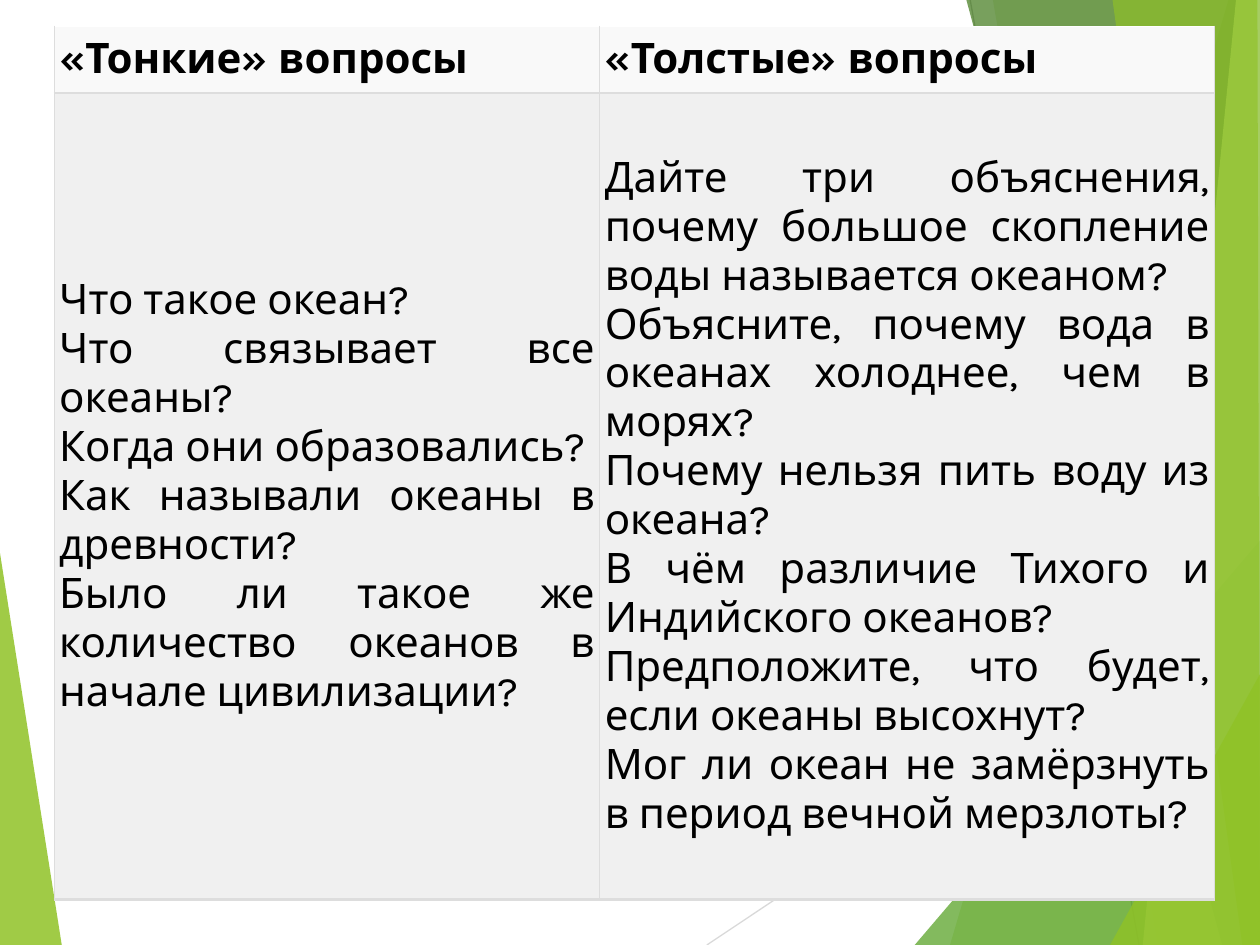
from lxml.etree import SubElement
from pptx import Presentation
from pptx.dml.color import RGBColor
from pptx.enum.shapes import MSO_CONNECTOR
from pptx.enum.text import MSO_ANCHOR, PP_ALIGN
from pptx.oxml import parse_xml
from pptx.oxml.ns import nsdecls, qn
from pptx.util import Inches, Pt

WIDTH, HEIGHT = 10, 7.5
FONT, TEXT_SIZE = "Karla", 24
TEXT, BORDER = "000000", "DDDDDD"

# Table content, one list of paragraphs per cell
HEADERS = [["«Тонкие» вопросы"], ["«Толстые» вопросы"]]
QUESTIONS = [
    [
        "Что такое океан?",
        "Что связывает все океаны?",
        "Когда они образовались?",
        "Как называли океаны в древности?",
        "Было ли такое же количество океанов в начале цивилизации?",
    ],
    [
        "Дайте три объяснения, почему большое скопление воды называется океаном?",
        "Объясните, почему вода в океанах холоднее, чем в морях?",
        "Почему нельзя пить воду из океана?",
        "В чём различие Тихого и Индийского океанов?",
        "Предположите, что будет, если океаны высохнут?",
        "Мог ли океан не замёрзнуть в период вечной мерзлоты?",
    ],
]
# Cells, fill, bold, bordered sides
ROWS = [(HEADERS, "F9F9F9", True, "LRB"), (QUESTIONS, "F0F0F0", False, "LRTB")]
TABLE_LEFT, TABLE_TOP = 0.43, 0.21
COLUMN_WIDTHS, ROW_HEIGHTS = [4.33, 4.88], [0.53, 6.4]
CELL_MARGIN = 0.04
BORDER_WIDTHS = {"L": 0.75, "R": 0.75, "T": 1.5, "B": 1.5}

# Background facets: colour, opacity in percent, corners
LEFT_FACET = ("90C226", 85, [(0, 4.39), (0.49, HEIGHT), (0, HEIGHT)])
RIGHT_FACETS = [
    ("90C226", 30, [(9.75, 0), (7.54, HEIGHT), (WIDTH, HEIGHT), (WIDTH, 0)]),
    ("90C226", 20, [(7.88, 0), (9.19, HEIGHT), (WIDTH, HEIGHT), (WIDTH, 0)]),
    ("54A021", 72, [(7.26, HEIGHT), (WIDTH, 4.29), (WIDTH, HEIGHT)]),
    ("3F7819", 70, [(7.67, 0), (9.7, HEIGHT), (WIDTH, HEIGHT), (WIDTH, 0)]),
    ("C0E474", 70, [(9.81, 0), (9.07, HEIGHT), (WIDTH, HEIGHT), (WIDTH, 0)]),
    ("90C226", 65, [(8.83, 0), (9.86, HEIGHT), (WIDTH, HEIGHT), (9.98, 0)]),
    ("90C226", 80, [(8.81, HEIGHT), (WIDTH, 5.35), (WIDTH, HEIGHT)]),
]
# Thin lines: start, end, colour
LINES = [
    ((5.61, HEIGHT), (WIDTH, 4.57), "D9D9D9"),
    ((7.7, 0), (9.04, HEIGHT), "BFBFBF"),
]


def color(hex_string):
    return RGBColor.from_string(hex_string)


def add_facet(slide, fill, opacity, corners):
    points = [(Inches(x), Inches(y)) for x, y in corners]
    builder = slide.shapes.build_freeform(*points[0])
    builder.add_line_segments(points[1:], close=True)
    facet = builder.convert_to_shape()
    facet.shadow.inherit = False
    facet.line.fill.background()
    facet.fill.solid()
    facet.fill.fore_color.rgb = color(fill)
    fill_color = facet.fill._xPr.find(qn("a:solidFill"))[0]
    SubElement(fill_color, qn("a:alpha"), val=str(opacity * 1000))


def add_line(slide, start, end, stroke):
    line = slide.shapes.add_connector(
        MSO_CONNECTOR.STRAIGHT, *(Inches(value) for value in start + end))
    line.line.color.rgb = color(stroke)
    line.line.width = Pt(0.75)
    SubElement(line._element.spPr, qn("a:effectLst"))


def set_borders(cell, sides):
    properties = cell._tc.get_or_add_tcPr()
    for position, side in enumerate(sides):
        properties.insert(position, parse_xml(
            f'<a:ln{side} {nsdecls("a")} w="{Pt(BORDER_WIDTHS[side])}">'
            f'<a:solidFill><a:srgbClr val="{BORDER}"/></a:solidFill>'
            f'</a:ln{side}>'))


def fill_cell(cell, paragraphs, fill, bold, sides):
    cell.fill.solid()
    cell.fill.fore_color.rgb = color(fill)
    cell.vertical_anchor = MSO_ANCHOR.MIDDLE
    cell.margin_left = cell.margin_right = Inches(CELL_MARGIN)
    cell.margin_top = cell.margin_bottom = Inches(CELL_MARGIN)
    set_borders(cell, sides)
    frame = cell.text_frame
    for index, text in enumerate(paragraphs):
        paragraph = frame.add_paragraph() if index else frame.paragraphs[0]
        paragraph.alignment = PP_ALIGN.JUSTIFY
        run = paragraph.add_run()
        run.text = text
        run.font.name = FONT
        run.font.size = Pt(TEXT_SIZE)
        run.font.bold = bold
        run.font.color.rgb = color(TEXT)


def add_question_table(slide):
    table = slide.shapes.add_table(
        len(ROWS), len(COLUMN_WIDTHS), Inches(TABLE_LEFT), Inches(TABLE_TOP),
        Inches(sum(COLUMN_WIDTHS)), Inches(sum(ROW_HEIGHTS))).table
    table.horz_banding = False
    for column, width in zip(table.columns, COLUMN_WIDTHS):
        column.width = Inches(width)
    for row, height, (cells, *style) in zip(table.rows, ROW_HEIGHTS, ROWS):
        row.height = Inches(height)
        for cell, paragraphs in zip(row.cells, cells):
            fill_cell(cell, paragraphs, *style)


def main():
    presentation = Presentation()
    presentation.slide_width = Inches(WIDTH)
    presentation.slide_height = Inches(HEIGHT)
    slide = presentation.slides.add_slide(presentation.slide_layouts[6])

    # Background decoration
    add_facet(slide, *LEFT_FACET)
    for line in LINES:
        add_line(slide, *line)
    for facet in RIGHT_FACETS:
        add_facet(slide, *facet)

    # Table of questions
    add_question_table(slide)
    presentation.save("out.pptx")


if __name__ == "__main__":
    main()
